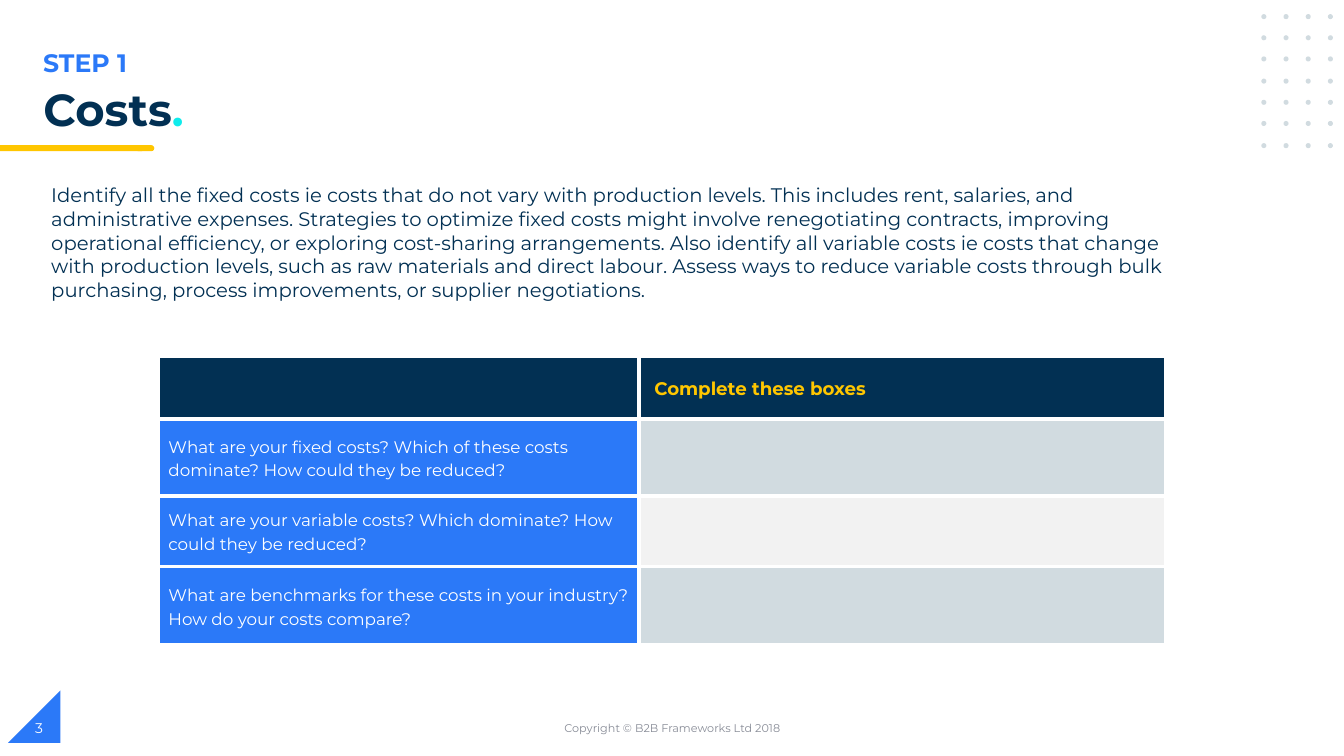
import pptx
import pptx.util
import pptx.dml.color
import pptx.enum.shapes
import pptx.enum.text
import pptx.oxml
import pptx.oxml.ns

RGBColor = pptx.dml.color.RGBColor
Pt = pptx.util.Pt
SHAPE = pptx.enum.shapes.MSO_SHAPE
ALIGN = pptx.enum.text.PP_ALIGN
ANCHOR = pptx.enum.text.MSO_ANCHOR

EMU_PER_PX = 9144  # 100 px to the inch
FONT = "Montserrat"

WHITE = RGBColor(0xFF, 0xFF, 0xFF)
NAVY = RGBColor(0x02, 0x30, 0x53)
BLUE = RGBColor(0x2B, 0x79, 0xF8)
YELLOW = RGBColor(0xFF, 0xC6, 0x00)
CYAN = RGBColor(0x0E, 0xEC, 0xEC)
MIST = RGBColor(0xD1, 0xDB, 0xE0)
PALE = RGBColor(0xF2, 0xF2, 0xF2)
GREY = RGBColor(0x88, 0x8C, 0x97)

INTRO = (
    "Identify all the fixed costs ie costs that do not vary with production levels. "
    "This includes rent, salaries, and administrative expenses. Strategies to optimize "
    "fixed costs might involve renegotiating contracts, improving operational efficiency, "
    "or exploring cost-sharing arrangements. Also identify all variable costs ie costs that "
    "change with production levels, such as raw materials and direct labour. Assess ways to "
    "reduce variable costs through bulk purchasing, process improvements, or supplier "
    "negotiations."
)
COLUMN_WIDTHS = (477, 522)
# Row height, question, question fill, answer heading, answer fill
COST_ROWS = (
    (63, "", NAVY, "Complete these boxes", NAVY),
    (76, "What are your fixed costs? Which of these costs dominate? "
         "How could they be reduced?", BLUE, "", MIST),
    (70, "What are your variable costs? Which dominate? "
         "How could they be reduced?", BLUE, "", PALE),
    (78, "What are benchmarks for these costs in your industry? "
         "How do your costs compare?", BLUE, "", MIST),
)


def px(length):
    return pptx.util.Emu(length * EMU_PER_PX)


def format_span(span, size, color, bold=False):
    span.font.name = FONT
    span.font.size = Pt(size)
    span.font.bold = bold
    span.font.color.rgb = color


def add_shape(page, kind, left, top, width, height, color):
    shape = page.shapes.add_shape(kind, px(left), px(top), px(width), px(height))
    shape.shadow.inherit = False
    shape.fill.solid()
    shape.fill.fore_color.rgb = color
    shape.line.fill.background()
    return shape


def add_text(page, text, left, top, width, height, size, color,
             bold=False, align=ALIGN.LEFT, anchor=ANCHOR.TOP):
    box = page.shapes.add_textbox(px(left), px(top), px(width), px(height))
    frame = box.text_frame
    frame.word_wrap = True
    frame.vertical_anchor = anchor
    frame.text = text
    para = frame.paragraphs[0]
    para.alignment = align
    format_span(para.runs[0], size, color, bold)


def format_title(page):
    title = page.shapes.title
    title.left, title.top, title.width, title.height = px(33), px(82), px(776), px(40)
    frame = title.text_frame
    frame.auto_size = pptx.enum.text.MSO_AUTO_SIZE.NONE
    frame.vertical_anchor = ANCHOR.TOP
    para = frame.paragraphs[0]
    para.alignment = ALIGN.LEFT
    para.line_spacing = 0.9
    for text, color in (("Costs", NAVY), (".", CYAN)):
        span = para.add_run()
        span.text = text
        format_span(span, 32, color, True)


def add_borders(cell, color, width):
    properties = cell._tc.get_or_add_tcPr()
    for side in ("lnL", "lnR", "lnT", "lnB"):
        properties.append(pptx.oxml.parse_xml(
            f'<a:{side} {pptx.oxml.ns.nsdecls("a")} w="{Pt(width)}">'
            f'<a:solidFill><a:srgbClr val="{color}"/></a:solidFill></a:{side}>'))


def fill_cell(cell, text, fill, size, color, bold, indent):
    add_borders(cell, WHITE, 3)
    cell.fill.solid()
    cell.fill.fore_color.rgb = fill
    cell.vertical_anchor = ANCHOR.MIDDLE
    cell.margin_left, cell.margin_right = px(indent), px(10)
    cell.margin_top = cell.margin_bottom = 0
    if text:
        cell.text_frame.text = text
        para = cell.text_frame.paragraphs[0]
        para.line_spacing = 1.15
        format_span(para.runs[0], size, color, bold)


def add_cost_table(page):
    height = sum(row[0] for row in COST_ROWS)
    table = page.shapes.add_table(
        len(COST_ROWS), len(COLUMN_WIDTHS), px(157), px(353),
        px(sum(COLUMN_WIDTHS)), px(height)).table
    for column, width in zip(table.columns, COLUMN_WIDTHS):
        column.width = px(width)
    for index, (height, question, fill, heading, answer_fill) in enumerate(COST_ROWS):
        table.rows[index].height = px(height)
        fill_cell(table.cell(index, 0), question, fill, 12, WHITE, False, 10)
        fill_cell(table.cell(index, 1), heading, answer_fill, 13, YELLOW, True, 15)


def add_dot_grid(page):
    for row in range(7):
        for column in range(4):
            add_shape(page, SHAPE.OVAL, 1251 + 22 * column, 14 + row * 64 // 3, 5, 5, MIST)


def main():
    deck = pptx.Presentation()
    deck.slide_width, deck.slide_height = px(1333), px(750)
    page = deck.slides.add_slide(deck.slide_layouts[5])

    # Decoration: corner triangle, yellow rule and dots
    corner = add_shape(page, SHAPE.RIGHT_TRIANGLE, 8, 685, 52, 52, BLUE)
    corner.element.spPr.xfrm.set("flipH", "1")
    add_shape(page, SHAPE.FLOWCHART_TERMINATOR, 134, 144, 19, 6, YELLOW)
    add_shape(page, SHAPE.RECTANGLE, 0, 144, 141, 6, YELLOW)
    add_dot_grid(page)

    # Heading and introduction
    add_text(page, "STEP 1", 33, 42, 669, 40, 18, BLUE, bold=True)
    format_title(page)
    add_text(page, INTRO, 41, 177, 1124, 128, 14, NAVY)

    # Worksheet
    add_cost_table(page)

    # Footer
    add_text(page, "Copyright © B2B Frameworks Ltd 2018", 442, 702, 450, 40, 8, GREY,
             align=ALIGN.CENTER, anchor=ANCHOR.MIDDLE)
    add_text(page, "3", 25, 702, 300, 40, 10, WHITE, anchor=ANCHOR.MIDDLE)

    deck.save("out.pptx")


if __name__ == "__main__":
    main()
